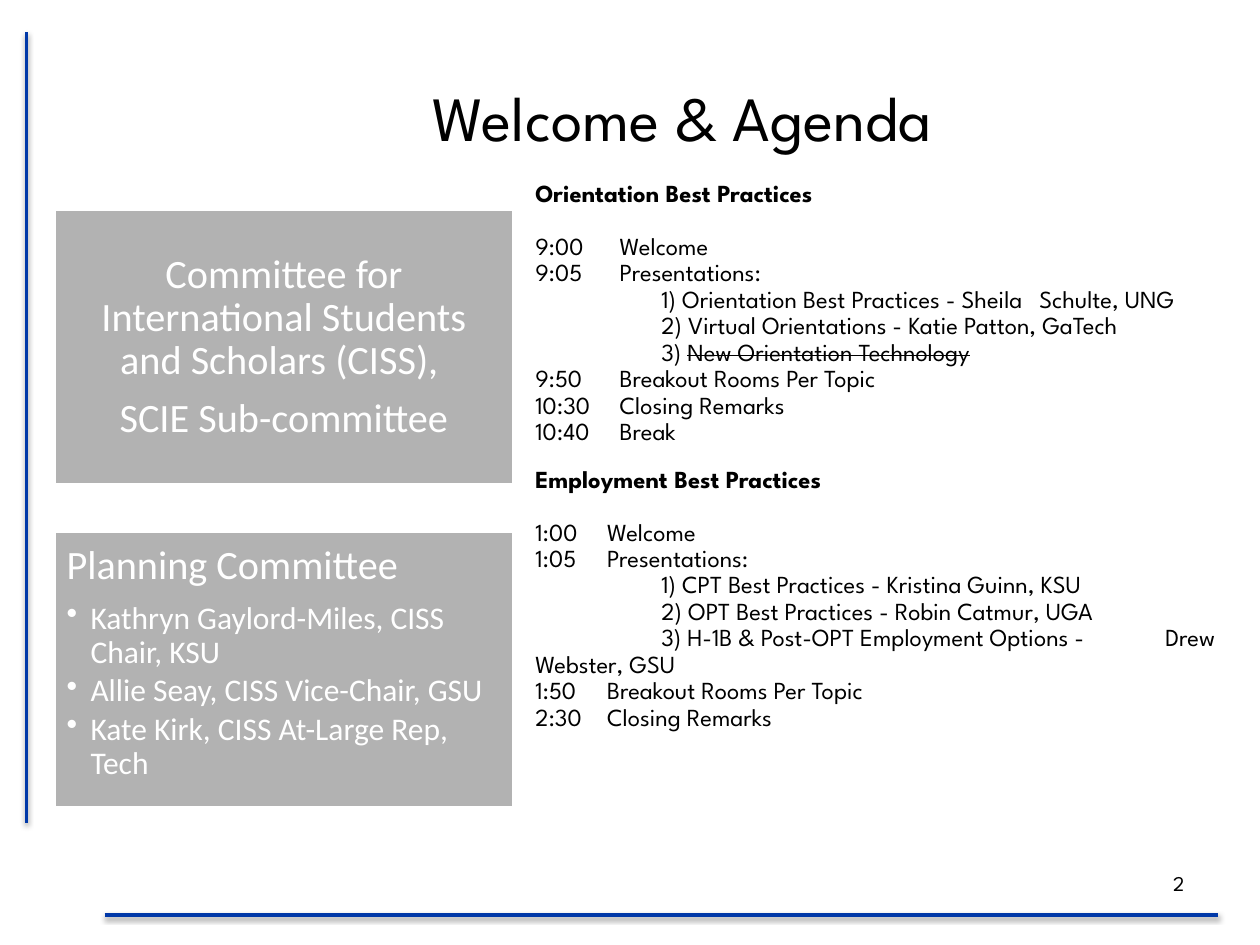
from lxml.etree import SubElement
from pptx import Presentation
from pptx.dml.color import RGBColor
from pptx.enum.shapes import MSO_CONNECTOR, MSO_SHAPE
from pptx.enum.text import MSO_ANCHOR, PP_ALIGN
from pptx.oxml.ns import qn
from pptx.util import Inches, Pt

BLUE = RGBColor(0x00, 0x38, 0xA8)
GRAY = RGBColor(0xB2, 0xB2, 0xB2)
WHITE = RGBColor(0xFF, 0xFF, 0xFF)
BLACK = RGBColor(0x00, 0x00, 0x00)
HEADING_FONT = "League Spartan"
PANEL_FONT = "Calibri"
MARGIN = Inches(0.1)

ORIENTATION = [
    "9:00\tWelcome",
    "9:05\tPresentations:",
    "\t1) Orientation Best Practices - Sheila\tSchulte, UNG",
    "\t2) Virtual Orientations - Katie Patton, GaTech",
    "\t3) ~New Orientation Technology",
    "9:50\tBreakout Rooms Per Topic",
    "10:30\tClosing Remarks",
    "10:40\tBreak",
]
EMPLOYMENT = [
    "1:00\tWelcome",
    "1:05\tPresentations:",
    "\t1) CPT Best Practices - Kristina Guinn, KSU",
    "\t2) OPT Best Practices - Robin Catmur, UGA",
    "\t3) H-1B & Post-OPT Employment Options -\tDrew\vWebster, GSU",
    "1:50\tBreakout Rooms Per Topic",
    "2:30\tClosing Remarks",
]
SECTIONS = [
    ("Orientation Best Practices", ORIENTATION, 0.67),
    ("Employment Best Practices", EMPLOYMENT, 0.57),
]
TALK_TABS = (1, 4, 5)
COMMITTEE = ["Committee for International Students and Scholars (CISS), ", "SCIE Sub-committee"]
PLANNERS = [
    "Kathryn Gaylord-Miles, CISS Chair, KSU",
    "Allie Seay, CISS Vice-Chair, GSU",
    "Kate Kirk, CISS At-Large Rep, Tech",
]


class AgendaSlide:
    """Draws the agenda elements on one slide in a shared style."""

    def __init__(self, slide):
        self.slide = slide

    def rule(self, x1, y1, x2, y2):
        line = self.slide.shapes.add_connector(
            MSO_CONNECTOR.STRAIGHT, Inches(x1), Inches(y1), Inches(x2), Inches(y2))
        line.line.color.rgb = BLUE
        line.line.width = Pt(2)
        effects = SubElement(line._element.spPr, qn("a:effectLst"))
        shadow = SubElement(effects, qn("a:outerShdw"), blurRad=str(Pt(3.1)), dist=str(Pt(1.6)),
                            dir="5400000", rotWithShape="0")
        color = SubElement(shadow, qn("a:srgbClr"), val=str(BLACK))
        SubElement(color, qn("a:alpha"), val="38000")

    def frame(self, shape, anchor):
        frame = shape.text_frame
        frame.word_wrap = True
        frame.vertical_anchor = anchor
        frame.margin_left = frame.margin_right = frame.margin_top = frame.margin_bottom = MARGIN
        return frame

    def text_box(self, left, top, width, height, anchor=MSO_ANCHOR.TOP):
        box = self.slide.shapes.add_textbox(Inches(left), Inches(top), Inches(width), Inches(height))
        return self.frame(box, anchor)

    def panel(self, top, anchor):
        rect = self.slide.shapes.add_shape(
            MSO_SHAPE.RECTANGLE, Inches(0.43), Inches(top), Inches(3.65), Inches(2.19))
        rect.shadow.inherit = False
        rect.fill.solid()
        rect.fill.fore_color.rgb = GRAY
        rect.line.color.rgb = WHITE
        rect.line.width = Pt(2)
        return self.frame(rect, anchor)

    def paragraph(self, frame, text, size, font=HEADING_FONT, color=BLACK, align=PP_ALIGN.LEFT,
                  bold=False, spacing=0.9, before=0, after=0, tabs=(), bullet=False):
        first = frame.paragraphs[0]
        paragraph = frame.add_paragraph() if first.runs else first
        plain, *struck = text.split("~")
        paragraph.text = plain
        for words in struck:
            run = paragraph.add_run()
            run.text = words
            run.font._element.set("strike", "sngStrike")
        paragraph.alignment = align
        paragraph.line_spacing = spacing
        paragraph.space_before = Pt(before)
        paragraph.space_after = Pt(after)
        properties = paragraph._p.get_or_add_pPr()
        if bullet:
            properties.set("marL", str(Inches(0.19)))
            properties.set("indent", str(-Inches(0.19)))
            SubElement(properties, qn("a:buChar"), char="•")
        if tabs:
            stops = SubElement(properties, qn("a:tabLst"))
            for stop in tabs:
                SubElement(stops, qn("a:tab"), pos=str(Inches(stop)), algn="l")
        for run in paragraph.runs:
            run.font.name = font
            run.font.size = Pt(size)
            run.font.bold = bold
            run.font.color.rgb = color

    def agenda(self, frame, heading, entries, time_tab, before):
        self.paragraph(frame, heading, 14, bold=True, before=before, after=15)
        for entry in entries:
            tabs = TALK_TABS if entry.startswith("\t") else (time_tab,)
            self.paragraph(frame, entry, 14, tabs=tabs)


def main():
    presentation = Presentation()
    presentation.slide_width = Inches(10)
    presentation.slide_height = Inches(7.5)
    page = AgendaSlide(presentation.slides.add_slide(presentation.slide_layouts[6]))

    page.rule(0.21, 6.53, 0.21, 0.25)
    page.rule(0.83, 7.26, 9.67, 7.26)

    title = page.text_box(1.33, 0.3, 8.17, 1.25, MSO_ANCHOR.MIDDLE)
    page.paragraph(title, "Welcome & Agenda", 36, align=PP_ALIGN.CENTER, spacing=1.0)

    schedule = page.text_box(4.15, 1.34, 5.72, 5.62)
    for index, (heading, entries, time_tab) in enumerate(SECTIONS):
        page.agenda(schedule, heading, entries, time_tab, before=12 * index)

    page_number = page.text_box(8.9, 6.81, 0.6, 0.4, MSO_ANCHOR.MIDDLE)
    page.paragraph(page_number, "2", 12, align=PP_ALIGN.RIGHT, spacing=1.0, after=6)

    committee = page.panel(1.66, MSO_ANCHOR.MIDDLE)
    for name in COMMITTEE:
        page.paragraph(committee, name, 23, PANEL_FONT, WHITE, PP_ALIGN.CENTER, after=8)

    planning = page.panel(4.22, MSO_ANCHOR.TOP)
    page.paragraph(planning, "Planning Committee", 23, PANEL_FONT, WHITE, after=8)
    for planner in PLANNERS:
        page.paragraph(planning, planner, 18, PANEL_FONT, WHITE, after=2.7, bullet=True)

    presentation.save("out.pptx")


if __name__ == "__main__":
    main()
